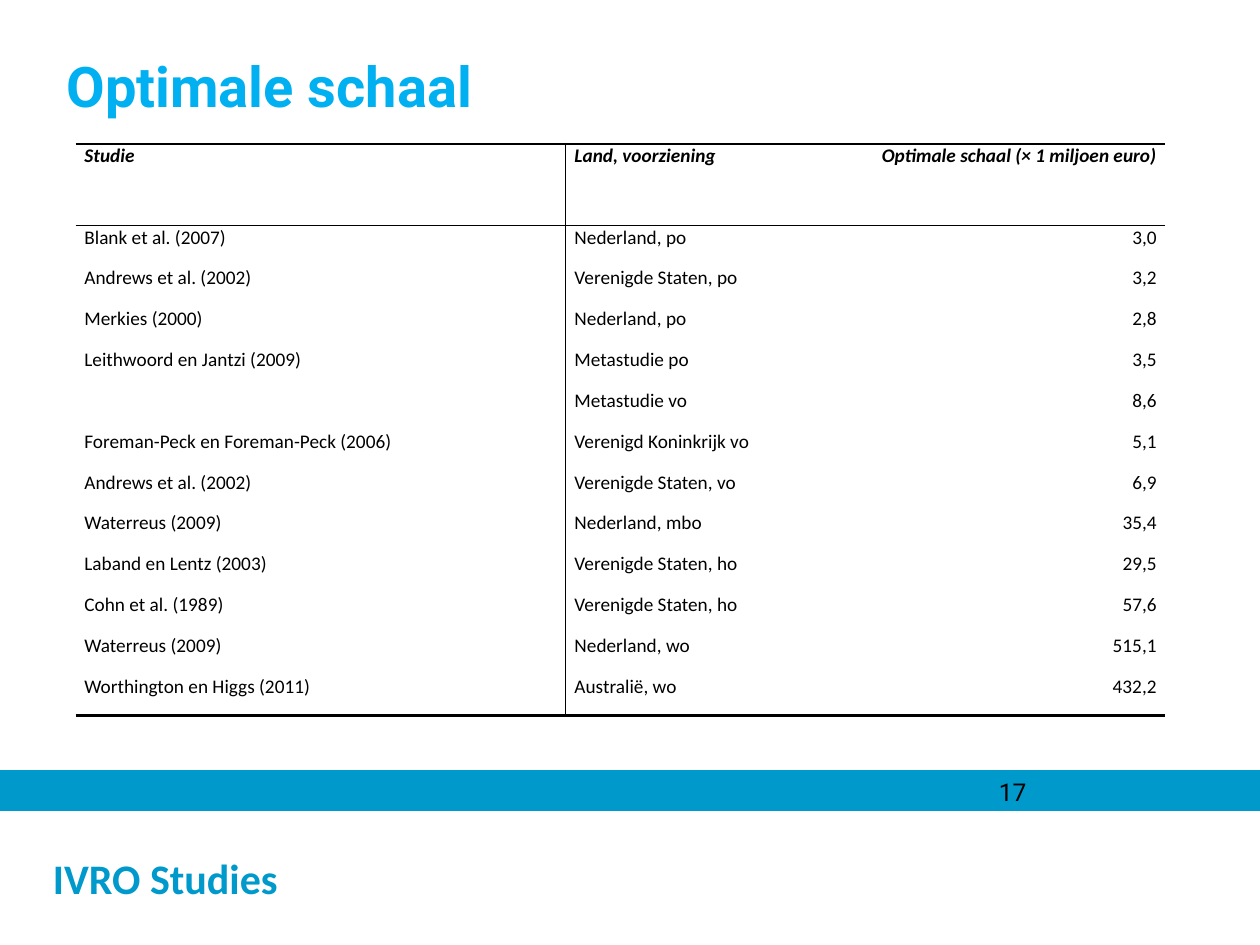
from pptx import Presentation
from pptx.dml.color import RGBColor
from pptx.enum.shapes import MSO_SHAPE
from pptx.enum.text import MSO_ANCHOR, PP_ALIGN
from pptx.oxml.ns import qn
from pptx.util import Inches, Pt
from lxml import etree

RECTANGLE = MSO_SHAPE.RECTANGLE
MIDDLE = MSO_ANCHOR.MIDDLE
LEFT, RIGHT = PP_ALIGN.LEFT, PP_ALIGN.RIGHT

COLORS = {"text": "000000", "title": "00B0F0", "band": "0099CC", "paper": "FFFFFF"}

HEADER = ("Studie", "Land, voorziening", "Optimale schaal (× 1 miljoen euro)")
STUDIES = [
    ("Blank et al. (2007)", "Nederland, po", "3,0"),
    ("Andrews et al. (2002)", "Verenigde Staten, po", "3,2"),
    ("Merkies (2000)", "Nederland, po", "2,8"),
    ("Leithwoord en Jantzi (2009)", "Metastudie po", "3,5"),
    ("", "Metastudie vo", "8,6"),
    ("Foreman-Peck en Foreman-Peck (2006)", "Verenigd Koninkrijk vo", "5,1"),
    ("Andrews et al. (2002)", "Verenigde Staten, vo", "6,9"),
    ("Waterreus (2009)", "Nederland, mbo", "35,4"),
    ("Laband en Lentz (2003)", "Verenigde Staten, ho", "29,5"),
    ("Cohn et al. (1989)", "Verenigde Staten, ho", "57,6"),
    ("Waterreus (2009)", "Nederland, wo", "515,1"),
    ("Worthington en Higgs (2011)", "Australië, wo", "432,2"),
]
COLUMN_WIDTHS = (3.89, 2.38, 2.38)
TABLE_HEIGHT, HEADER_HEIGHT = 4.54, 0.65


def color(name):
    return RGBColor.from_string(COLORS[name])


def write(frame, text, size, font="Roboto", fill="text", bold=False, italic=False,
          align=LEFT, spacing=0):
    paragraph = frame.paragraphs[0]
    paragraph.alignment = align
    if spacing:
        paragraph.space_before = paragraph.space_after = Pt(spacing)
    if not text:
        return
    run = paragraph.add_run()
    run.text = text
    run.font.name = font
    run.font.size = Pt(size)
    run.font.bold = bold
    run.font.italic = italic
    run.font.color.rgb = color(fill)


def add_text(slide, left, top, width, height, text, size, **style):
    box = slide.shapes.add_textbox(Inches(left), Inches(top), Inches(width), Inches(height))
    box.text_frame.word_wrap = True
    write(box.text_frame, text, size, **style)


def add_band(slide, left, top, width, height, fill, line=None):
    band = slide.shapes.add_shape(
        RECTANGLE, Inches(left), Inches(top), Inches(width), Inches(height))
    band.shadow.inherit = False
    band.fill.solid()
    band.fill.fore_color.rgb = color(fill)
    if line:
        band.line.color.rgb = color(line)
        band.line.width = Pt(0.75)
    else:
        band.line.fill.background()
    return band


def set_borders(cell, **widths):
    """Draw the sides named (L, R, T, B) at their width in points; clear the rest."""
    properties = cell._tc.get_or_add_tcPr()
    for side in "LRTB":
        line = etree.SubElement(properties, qn(f"a:ln{side}"))
        width = widths.get(side)
        if width:
            line.set("w", str(Pt(width)))
            fill = etree.SubElement(line, qn("a:solidFill"))
            etree.SubElement(fill, qn("a:srgbClr"), val=COLORS["text"])
        else:
            etree.SubElement(line, qn("a:noFill"))


def cell_borders(row, column, last_row):
    borders = {}
    if column == 0:
        borders["R"] = 1
    if column == 1:
        borders["L"] = 1
    if row == 0:
        borders.update(T=1.5, B=1)
    if row == 1:
        borders["T"] = 1
    if row == last_row:
        borders["B"] = 1.5
    return borders


def add_studies_table(slide):
    rows = [HEADER] + STUDIES
    table = slide.shapes.add_table(
        len(rows), len(HEADER), Inches(0.6), Inches(1.14),
        Inches(sum(COLUMN_WIDTHS)), Inches(TABLE_HEIGHT)).table
    table.first_row = table.horz_banding = False
    for column, width in zip(table.columns, COLUMN_WIDTHS):
        column.width = Inches(width)
    body_height = (TABLE_HEIGHT - HEADER_HEIGHT) / len(STUDIES)
    for r, texts in enumerate(rows):
        is_header = r == 0
        table.rows[r].height = Inches(HEADER_HEIGHT if is_header else body_height)
        for c, text in enumerate(texts):
            cell = table.cell(r, c)
            cell.margin_left = cell.margin_right = Inches(0.07)
            cell.margin_top = cell.margin_bottom = 0
            set_borders(cell, **cell_borders(r, c, len(STUDIES)))
            cell.fill.background()
            write(cell.text_frame, text, 11, font="Calibri", bold=is_header,
                  italic=is_header, align=RIGHT if c == 2 else LEFT,
                  spacing=0 if is_header else 1)


def add_footer(slide):
    footer = add_band(slide, -0.01, 6.44, 10.01, 1.06, "paper")
    frame = footer.text_frame
    frame.margin_left = Inches(0.43)
    frame.vertical_anchor = MIDDLE
    write(frame, "IVRO Studies", 24, font="Calibri", fill="band", bold=True)
    add_band(slide, 0, 6.12, 10, 0.31, "band", line="band")
    add_text(slide, 7.83, 6.12, 2.08, 0.25, "17", 14)


def main():
    presentation = Presentation()
    presentation.slide_width = Inches(10)
    presentation.slide_height = Inches(7.5)
    slide = presentation.slides.add_slide(presentation.slide_layouts[6])
    add_footer(slide)
    add_text(slide, 0.43, 0.36, 8.81, 0.64, "Optimale schaal", 32, fill="title", bold=True)
    add_studies_table(slide)
    presentation.save("out.pptx")


if __name__ == "__main__":
    main()
